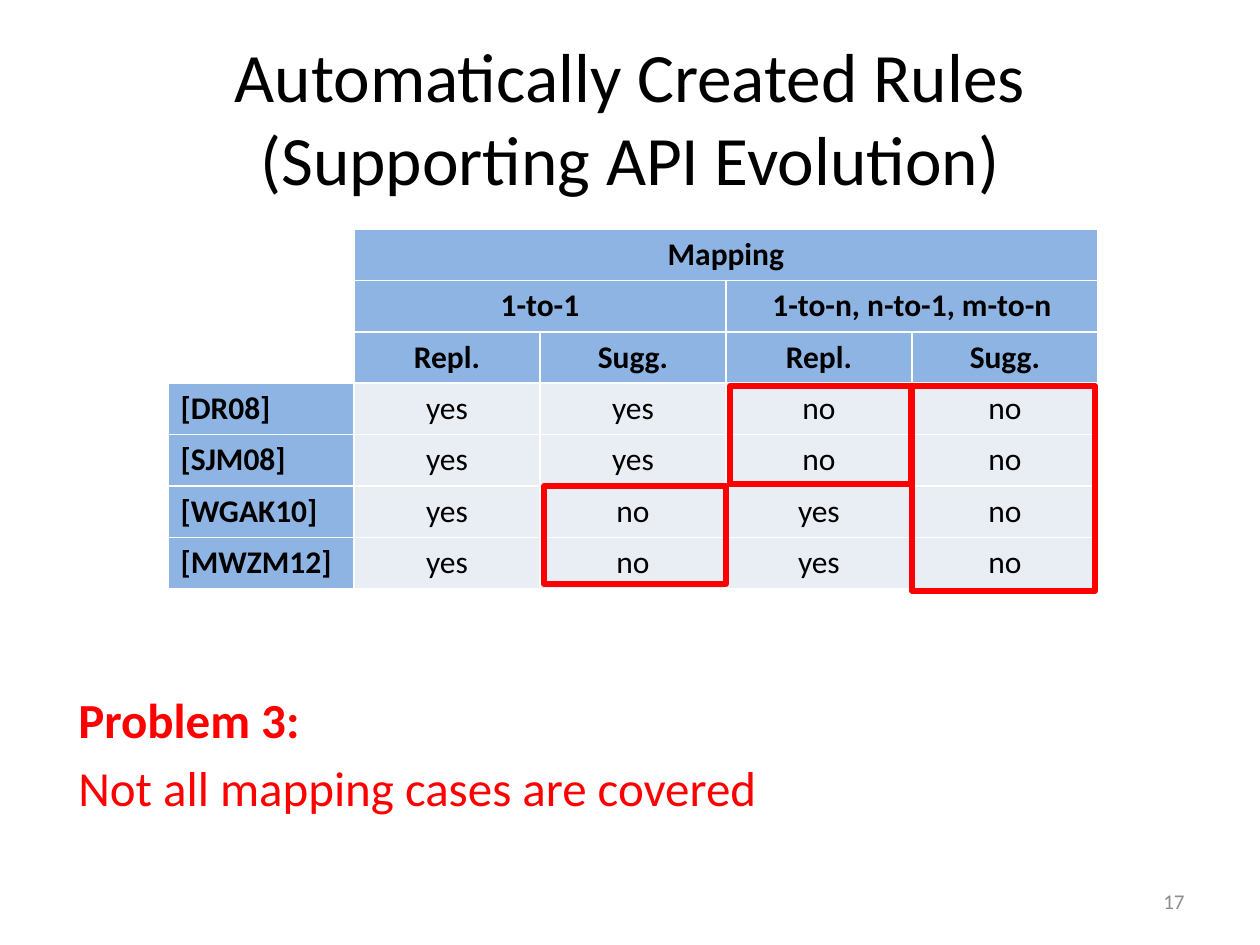
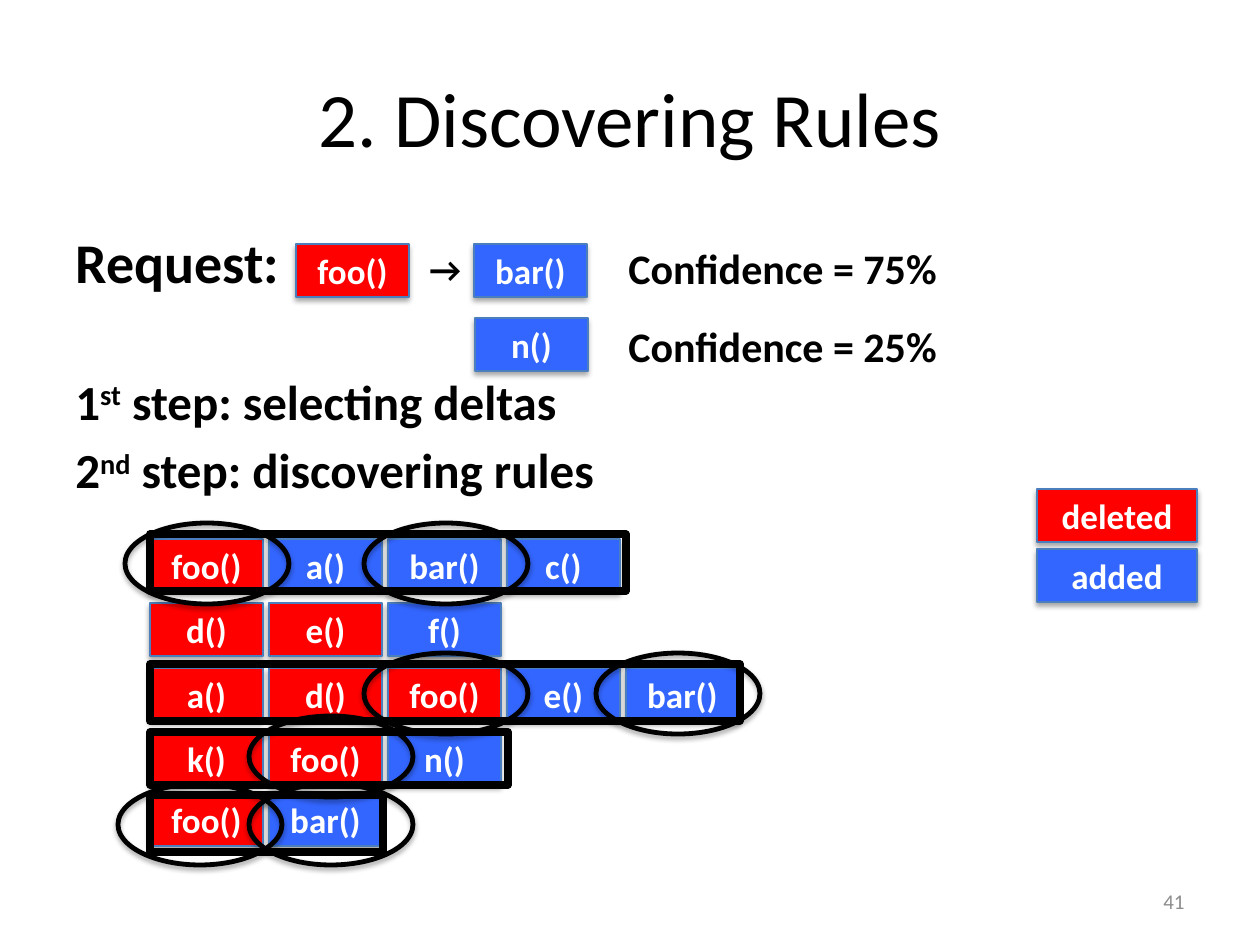
"""Build two slides on API evolution rules: the mapping table and rule discovery."""
from lxml.etree import SubElement
from pptx import Presentation
from pptx.dml.color import RGBColor
from pptx.enum.shapes import MSO_SHAPE
from pptx.enum.text import MSO_ANCHOR, PP_ALIGN
from pptx.oxml import parse_xml
from pptx.oxml.ns import nsdecls, qn
from pptx.util import Pt

PX = 914400 / 126
FONT = "Calibri"
COLORS = {
    "black": "000000", "white": "FFFFFF", "red": "FF0000", "blue": "3366FF",
    "edge": "4B7EBC", "header": "8EB4E3", "cell": "E9EDF4", "gray": "8C8C8C",
}
RGB = {name: RGBColor.from_string(value) for name, value in COLORS.items()}
TITLE_BOX = (63, 38, 1134, 157)
NUMBER_BOX = (903, 876, 294, 50)
CHIP_W, CHIP_H, CHIP_PITCH = 113, 53, 119


def add_text(s, box, lines, size, color="black", bold=False,
             align=PP_ALIGN.LEFT, anchor=MSO_ANCHOR.TOP):
    tf = s.shapes.add_textbox(*[round(v * PX) for v in box]).text_frame
    tf.word_wrap = True
    tf.vertical_anchor = anchor
    tf.text = "\n".join(lines)
    for i, p in enumerate(tf.paragraphs):
        p.alignment = align
        p.space_before = Pt(5.5 if i else 0)
        p.font.name, p.font.size, p.font.bold = FONT, Pt(size), bold
        p.font.color.rgb = RGB[color]
    return tf


def add_box(s, box, line, width, fill=None, text="", shadow=False, kind=MSO_SHAPE.RECTANGLE):
    sp = s.shapes.add_shape(kind, *[round(v * PX) for v in box])
    sp.shadow.inherit = False
    sp.line.color.rgb, sp.line.width = RGB[line], Pt(width)
    if fill:
        sp.fill.solid()
        sp.fill.fore_color.rgb = RGB[fill]
    else:
        sp.fill.background()
    if shadow:
        effects = sp._element.spPr.find(qn("a:effectLst"))
        outer = SubElement(effects, qn("a:outerShdw"), blurRad=str(Pt(3.1)), dist=str(Pt(1.8)),
                           dir="5400000", rotWithShape="0")
        clr = SubElement(outer, qn("a:srgbClr"), val=COLORS["black"])
        SubElement(clr, qn("a:alpha"), val="35000")
    if text:
        p = sp.text_frame.paragraphs[0]
        p.text = text
        p.alignment = PP_ALIGN.CENTER
        p.font.name, p.font.size, p.font.bold = FONT, Pt(20), True
        p.font.color.rgb = RGB["white"]


prs = Presentation()
prs.slide_width, prs.slide_height = round(1260 * PX), round(945 * PX)

slides = []
for title, size, number in [
    ("Automatically Created Rules\v(Supporting API Evolution)", 39.6, "17"),
    ("2. Discovering Rules", 44, "41"),
]:
    s = prs.slides.add_slide(prs.slide_layouts[6])
    add_text(s, TITLE_BOX, [title], size, align=PP_ALIGN.CENTER, anchor=MSO_ANCHOR.MIDDLE)
    add_text(s, NUMBER_BOX, [number], 12, "gray", align=PP_ALIGN.RIGHT, anchor=MSO_ANCHOR.MIDDLE)
    slides.append(s)
mapping, discovery = slides

tf = add_text(mapping, (66, 683, 1134, 160),
              ["Problem 3:", "Not all mapping cases are covered"], 28, "red")
tf.paragraphs[0].font.bold = True

rows = [
    ["", "Mapping", "", "", ""],
    ["", "1-to-1", "", "1-to-n, n-to-1, m-to-n", ""],
    ["", "Repl.", "Sugg.", "Repl.", "Sugg."],
    ["[DR08]", "yes", "yes", "no", "no"],
    ["[SJM08]", "yes", "yes", "no", "no"],
    ["[WGAK10]", "yes", "no", "yes", "no"],
    ["[MWZM12]", "yes", "no", "yes", "no"],
]
HEADER_ROWS = 3
frame = mapping.shapes.add_table(len(rows), len(rows[0]),
                                 *[round(v * PX) for v in (168, 229, 930, 360)])
table = frame.table
table.first_row = table.horz_banding = False
for r, row in enumerate(rows):
    for c, value in enumerate(row):
        cell = table.cell(r, c)
        tcPr = cell._tc.get_or_add_tcPr()
        for side in ("lnL", "lnR", "lnT", "lnB"):
            tcPr.append(parse_xml(
                f'<a:{side} {nsdecls("a")} w="{Pt(1)}"><a:solidFill>'
                f'<a:srgbClr val="{COLORS["white"]}"/></a:solidFill></a:{side}>'))
        is_header = r < HEADER_ROWS or c == 0
        if r < HEADER_ROWS and c == 0:
            cell.fill.background()
        else:
            cell.fill.solid()
            cell.fill.fore_color.rgb = RGB["header" if is_header else "cell"]
        p = cell.text_frame.paragraphs[0]
        p.text = value
        p.alignment = PP_ALIGN.CENTER if c else PP_ALIGN.LEFT
        p.font.name, p.font.size, p.font.bold = FONT, Pt(18), is_header
        p.font.color.rgb = RGB["black"]
for r, first, last in [(0, 1, 4), (1, 1, 2), (1, 3, 4)]:
    table.cell(r, first).merge(table.cell(r, last))

for uncovered in [(912, 386, 183, 205), (544, 486, 182, 98), (730, 386, 181, 98)]:
    add_box(mapping, uncovered, "red", 3)

tf = add_text(discovery, (63, 221, 1134, 624), ["Request:", "1", "2"], 28, bold=True)
request, *steps = tf.paragraphs
request.font.size = Pt(32)
steps[0].space_before = Pt(44)
for p, ordinal, label in zip(steps, ("st", "nd"),
                             (" step: selecting deltas", " step: discovering rules")):
    r = p.add_run()
    r.text = ordinal
    r._r.get_or_add_rPr().set("baseline", "30000")
    p.add_run().text = label

deltas = [
    (539, ["foo()"], ["a()", "bar()", "c()"]),
    (603, ["d()", "e()"], ["f()"]),
    (668, ["a()", "d()", "foo()"], ["e()", "bar()"]),
    (732, ["k()", "foo()"], ["n()"]),
    (793, ["foo()"], ["bar()"]),
]
chips = [
    (150 + i * CHIP_PITCH, top, CHIP_W, call, "red" if i < len(deleted) else "blue")
    for top, deleted, added in deltas
    for i, call in enumerate(deleted + added)
]
chips += [
    (1037, 489, 160, "deleted", "red"), (1037, 549, 160, "added", "blue"),
    (296, 244, CHIP_W, "foo()", "red"), (474, 244, CHIP_W, "bar()", "blue"),
    (475, 318, CHIP_W, "n()", "blue"),
]
for x, y, w, call, fill in chips:
    add_box(discovery, (x, y, w, CHIP_H), "edge", 0.75, fill, call, shadow=True)

for y, w, h in [(534, 476, 57), (664, 590, 57), (732, 358, 53), (795, 233, 57)]:
    add_box(discovery, (150, y, w, h), "black", 4.25)

for x, y in [(125, 523), (364, 523), (364, 653), (596, 653), (249, 716), (118, 784), (249, 784)]:
    add_box(discovery, (x, y, 164, 81), "black", 2.75, shadow=True, kind=MSO_SHAPE.OVAL)

arrow = add_text(discovery, (417, 241, 58, 55), ["→"], 20, bold=True)
arrow.word_wrap = False
for y, percent in [(236, 75), (314, 25)]:
    add_text(discovery, (616, y, 352, 63), [f"Confidence = {percent}%"], 24, bold=True)

prs.save("out.pptx")
